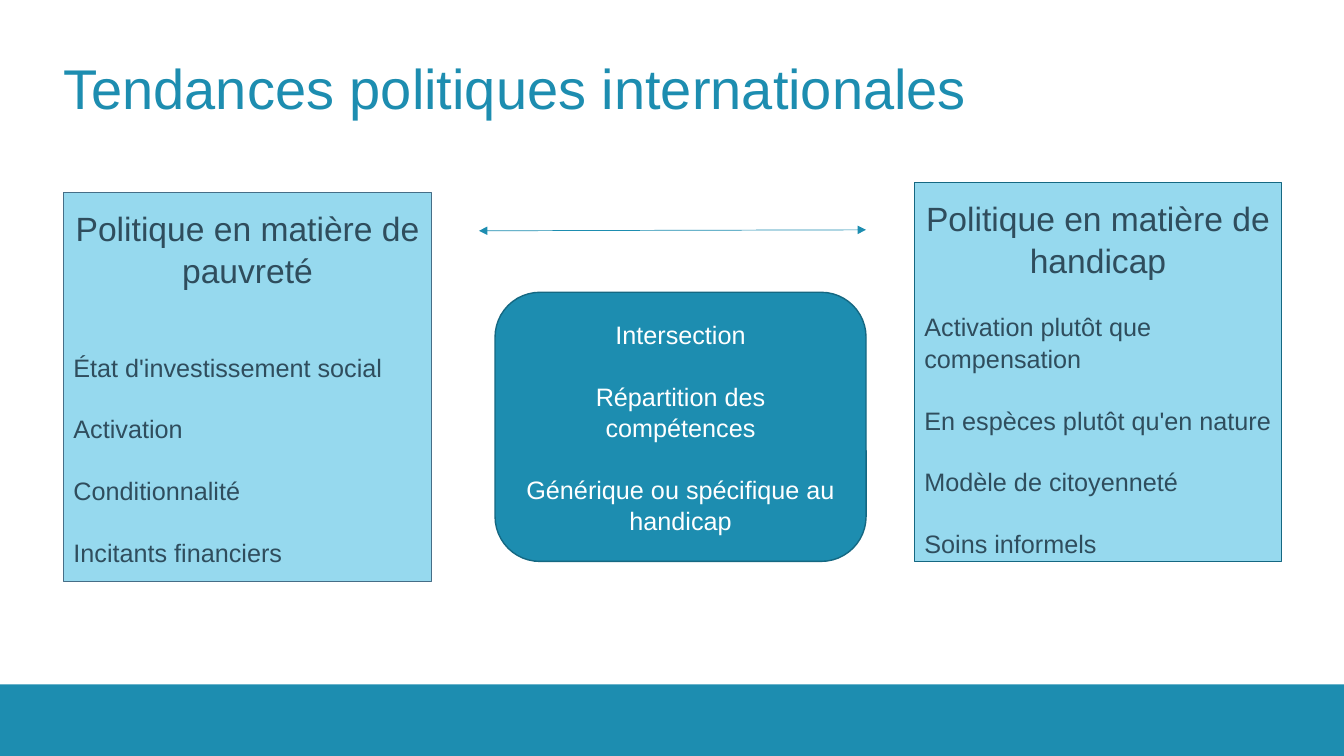
from pptx import Presentation
from pptx.dml.color import RGBColor
from pptx.enum.shapes import MSO_CONNECTOR, MSO_SHAPE as SHAPE
from pptx.enum.text import MSO_ANCHOR as ANCHOR, PP_ALIGN as ALIGN
from pptx.oxml.ns import qn
from pptx.util import Inches, Pt
from lxml import etree

TEAL, SKY, SLATE, WHITE = "1D8DB0", "96D9EE", "2F4D5D", "FFFFFF"
GAP = 21.6


def rgb(value):
    return RGBColor.from_string(value)


def add_text(tf, text, size=18, color=SLATE, align=ALIGN.LEFT, before=0, spacing=1.04):
    p = tf.paragraphs[0]
    if p.runs:
        p = tf.add_paragraph()
    p.alignment = align
    p.line_spacing = spacing
    p.space_before = Pt(before)
    r = p.add_run()
    r.text = text
    r.font.name = "Arial"
    r.font.size = Pt(size)
    r.font.color.rgb = rgb(color)


def add_box(s, kind, box, fill, line=None):
    sp = s.shapes.add_shape(kind, *map(Inches, box))
    sp.shadow.inherit = False
    sp.fill.solid()
    sp.fill.fore_color.rgb = rgb(fill)
    if line:
        sp.line.color.rgb = rgb(line)
        sp.line.width = Pt(1)
    else:
        sp.line.fill.background()
    tf = sp.text_frame
    tf.word_wrap = True
    tf.vertical_anchor = ANCHOR.MIDDLE
    return tf


def add_title(s, box, text):
    tf = s.shapes.add_textbox(*map(Inches, box)).text_frame
    tf.word_wrap = True
    tf.vertical_anchor = ANCHOR.MIDDLE
    tf.margin_left = tf.margin_right = tf.margin_top = tf.margin_bottom = 0
    add_text(tf, text, size=40, color=TEAL, spacing=1)


def add_policy(s, box, line, heading, items, first_gap=GAP, top=0.05):
    tf = add_box(s, SHAPE.RECTANGLE, box, SKY, line)
    tf.margin_top = Inches(top)
    add_text(tf, heading, size=24, align=ALIGN.CENTER)
    for i, item in enumerate(items):
        add_text(tf, item, before=GAP if i else first_gap)


def add_intersection(s, box, items):
    tf = add_box(s, SHAPE.ROUNDED_RECTANGLE, box, TEAL, "156882")
    for i, item in enumerate(items):
        add_text(tf, item, color=WHITE, align=ALIGN.CENTER, before=GAP if i else 0)


def add_double_arrow(s, start, end):
    c = s.shapes.add_connector(MSO_CONNECTOR.STRAIGHT, *map(Inches, start + end))
    c.line.color.rgb = rgb(TEAL)
    c.line.width = Pt(0.5)
    ln = c.line._get_or_add_ln()
    for tag in ("a:headEnd", "a:tailEnd"):
        etree.SubElement(ln, qn(tag), type="triangle")
    etree.SubElement(c._element.spPr, qn("a:effectLst"))


def main():
    prs = Presentation()
    prs.slide_width, prs.slide_height = Inches(13.33), Inches(7.5)
    s = prs.slides.add_slide(prs.slide_layouts[6])
    add_box(s, SHAPE.RECTANGLE, (0, 6.79, 13.33, 0.71), TEAL)
    add_title(s, (0.63, 0.23, 12.07, 1.26), "Tendances politiques internationales")
    add_policy(s, (0.63, 1.91, 3.65, 3.86), "466E87", "Politique en matière de pauvreté",
               ["État d'investissement social", "Activation", "Conditionnalité",
                "Incitants financiers"], first_gap=2 * GAP)
    add_policy(s, (9.07, 1.81, 3.64, 3.76), "156882", "Politique en matière de handicap",
               ["Activation plutôt que compensation", "En espèces plutôt qu'en nature",
                "Modèle de citoyenneté", "Soins informels"], top=0.16)
    add_double_arrow(s, (4.75, 2.29), (8.59, 2.28))
    add_intersection(s, (4.91, 2.9, 3.68, 2.67),
                     ["Intersection", "Répartition des compétences",
                      "Générique ou spécifique au handicap"])
    prs.save("out.pptx")


if __name__ == "__main__":
    main()
